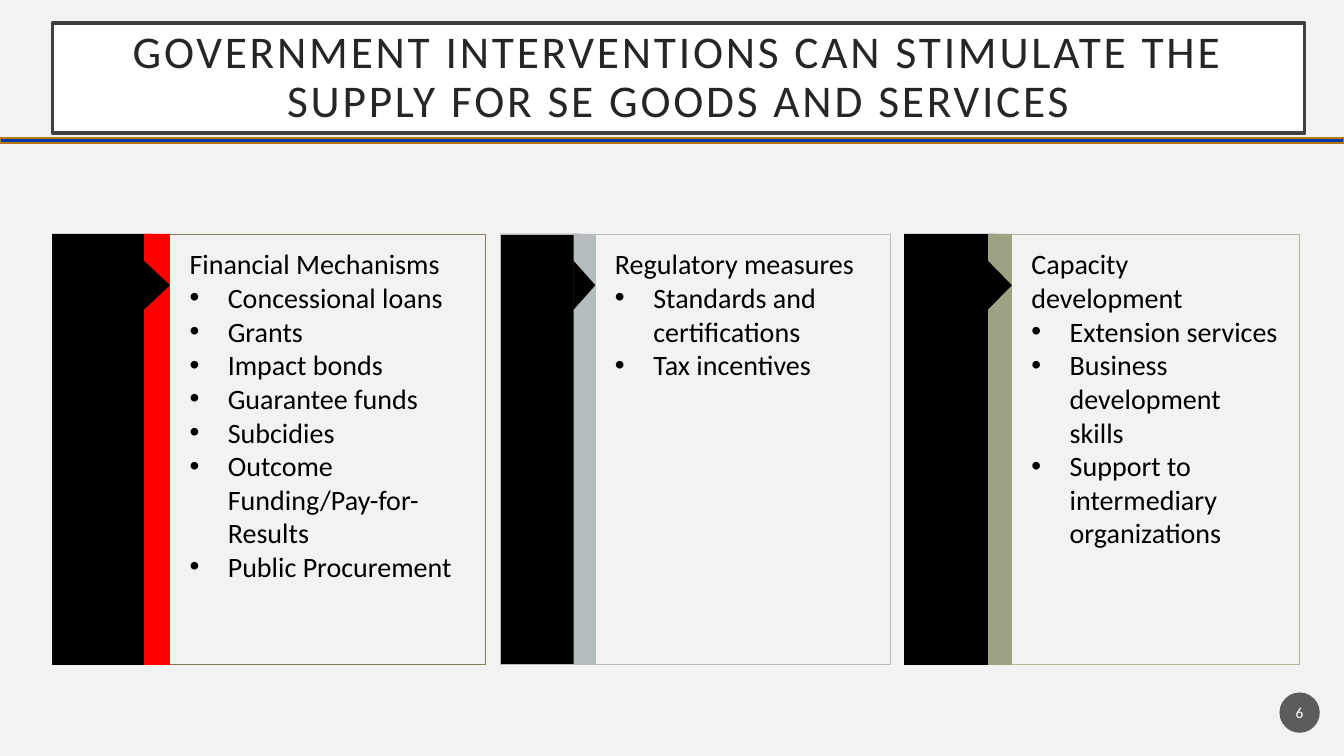
from dataclasses import dataclass
from typing import Any

from lxml import etree
from pptx import Presentation
from pptx.dml.color import RGBColor
from pptx.enum.shapes import MSO_SHAPE
from pptx.enum.text import MSO_ANCHOR, PP_ALIGN
from pptx.oxml.ns import qn
from pptx.util import Inches, Pt

RECTANGLE, TRIANGLE, OVAL = MSO_SHAPE.RECTANGLE, MSO_SHAPE.ISOSCELES_TRIANGLE, MSO_SHAPE.OVAL
LEFT, CENTER = PP_ALIGN.LEFT, PP_ALIGN.CENTER
TOP, MIDDLE = MSO_ANCHOR.TOP, MSO_ANCHOR.MIDDLE

BLACK = RGBColor(0x00, 0x00, 0x00)
WHITE = RGBColor(0xFF, 0xFF, 0xFF)
PALE = RGBColor(0xF2, 0xF2, 0xF2)
BLUE = RGBColor(0x00, 0x39, 0xA6)
AMBER = RGBColor(0xB6, 0x78, 0x15)
RED = RGBColor(0xFF, 0x00, 0x00)
SILVER = RGBColor(0xB4, 0xBC, 0xBE)
SAGE = RGBColor(0x9C, 0xA3, 0x83)
BROWN = RGBColor(0x87, 0x79, 0x5D)
SAND = RGBColor(0xBA, 0xB0, 0x9B)
DARK = RGBColor(0x40, 0x40, 0x40)
TITLE_INK = RGBColor(0x26, 0x26, 0x26)
BADGE = RGBColor(0x1D, 0x1D, 0x1D)

PANEL_TOP, PANEL_HEIGHT = 2.32, 4.27
ARROW_MIDDLE, ARROW_SPAN = 2.83, 0.47
BULLET_INDENT = 0.38


@dataclass
class Panel:
    heading: str
    points: list[str]
    left: float
    bar_width: float
    stripe_width: float
    body_left: float
    body_width: float
    accent: RGBColor
    bar_line: RGBColor
    body_line: RGBColor


PANELS = [
    Panel("Financial Mechanisms",
          ["Concessional loans", "Grants", "Impact bonds", "Guarantee funds", "Subcidies",
           "Outcome Funding/Pay-for-Results", "Public Procurement"],
          0.52, 0.99, 0.25, 1.68, 3.13, RED, BLACK, BROWN),
    Panel("Regulatory measures", ["Standards and certifications", "Tax incentives"],
          4.96, 0.8, 0.21, 5.9, 2.93, SILVER, SILVER, SILVER),
    Panel("Capacity development",
          ["Extension services", "Business development skills",
           "Support to intermediary organizations"],
          8.97, 0.9, 0.23, 10.03, 2.86, SAGE, BLACK, SAND),
]


def add_box(page: Any, kind: Any, left: float, top: float, width: float, height: float,
            fill: RGBColor, line: RGBColor | None = None, weight: float = 0.25) -> Any:
    box = page.shapes.add_shape(kind, Inches(left), Inches(top), Inches(width), Inches(height))
    box.shadow.inherit = False
    box.fill.solid()
    box.fill.fore_color.rgb = fill
    if line is None:
        box.line.fill.background()
    else:
        box.line.color.rgb = line
        box.line.width = Pt(weight)
    return box


def set_frame(box: Any, anchor: Any, side: float, edge: float) -> None:
    frame = box.text_frame
    layout = {"word_wrap": True, "vertical_anchor": anchor,
              "margin_left": Inches(side), "margin_right": Inches(side),
              "margin_top": Inches(edge), "margin_bottom": Inches(edge)}
    for name, value in layout.items():
        setattr(frame, name, value)


def add_span(para: Any, text: str, size: float, color: RGBColor, align: Any) -> Any:
    para.alignment = align
    span = para.add_run()
    span.text = text
    for name, value in {"name": "Calibri", "size": Pt(size)}.items():
        setattr(span.font, name, value)
    span.font.color.rgb = color
    return span


def add_bullet(para: Any) -> None:
    properties = para._p.get_or_add_pPr()
    properties.set("marL", str(Inches(BULLET_INDENT)))
    properties.set("indent", str(-Inches(BULLET_INDENT)))
    etree.SubElement(properties, qn("a:buFont")).set("typeface", "Arial")
    etree.SubElement(properties, qn("a:buChar")).set("char", "•")


def add_panel(page: Any, panel: Panel) -> None:
    # Text body
    body = add_box(page, RECTANGLE, panel.body_left, PANEL_TOP, panel.body_width, PANEL_HEIGHT,
                   PALE, panel.body_line)
    set_frame(body, TOP, 0.2, 0.13)
    add_span(body.text_frame.paragraphs[0], panel.heading, 20, BLACK, LEFT)
    for point in panel.points:
        para = body.text_frame.add_paragraph()
        add_bullet(para)
        add_span(para, point, 20, BLACK, LEFT)

    # Black bar and accent stripe
    add_box(page, RECTANGLE, panel.left, PANEL_TOP, panel.bar_width, PANEL_HEIGHT,
            BLACK, panel.bar_line)
    stripe_left = panel.body_left - panel.stripe_width
    add_box(page, RECTANGLE, stripe_left, PANEL_TOP, panel.stripe_width, PANEL_HEIGHT,
            panel.accent, panel.accent)

    # Arrow across the stripe, pointing at the body
    depth = panel.stripe_width
    middle = stripe_left + depth / 2
    arrow = add_box(page, TRIANGLE, middle - ARROW_SPAN / 2, ARROW_MIDDLE - depth / 2,
                    ARROW_SPAN, depth, BLACK, BLACK, 0.5)
    arrow.rotation = 90


def add_title(page: Any) -> None:
    title = add_box(page, RECTANGLE, 0.52, 0.23, 12.42, 1.09, WHITE, DARK, 2.5)
    set_frame(title, MIDDLE, 0.2, 0.2)
    para = title.text_frame.paragraphs[0]
    para.line_spacing = 0.9
    span = add_span(
        para, "GOVERNMENT INTERVENTIONS CAN STIMULATE THE SUPPLY FOR SE GOODS AND SERVICES",
        32.4, TITLE_INK, CENTER)
    span.font._element.set("spc", "200")


def add_page_number(page: Any) -> None:
    badge = add_box(page, OVAL, 12.69, 6.87, 0.4, 0.4, BADGE)
    color = badge._element.spPr.find(qn("a:solidFill")).find(qn("a:srgbClr"))
    etree.SubElement(color, qn("a:alpha")).set("val", "70000")
    set_frame(badge, MIDDLE, 0.02, 0.05)
    add_span(badge.text_frame.paragraphs[0], "6", 11, WHITE, CENTER)


def main() -> None:
    deck = Presentation()
    deck.slide_width, deck.slide_height = Inches(13.33), Inches(7.5)
    page = deck.slides.add_slide(deck.slide_layouts[6])
    page.background.fill.solid()
    page.background.fill.fore_color.rgb = PALE

    # Rule below the title
    add_box(page, RECTANGLE, 0, 1.37, 13.33, 0.05, BLUE, AMBER, 1)
    for panel in PANELS:
        add_panel(page, panel)
    add_title(page)
    add_page_number(page)
    deck.save("out.pptx")


if __name__ == "__main__":
    main()
